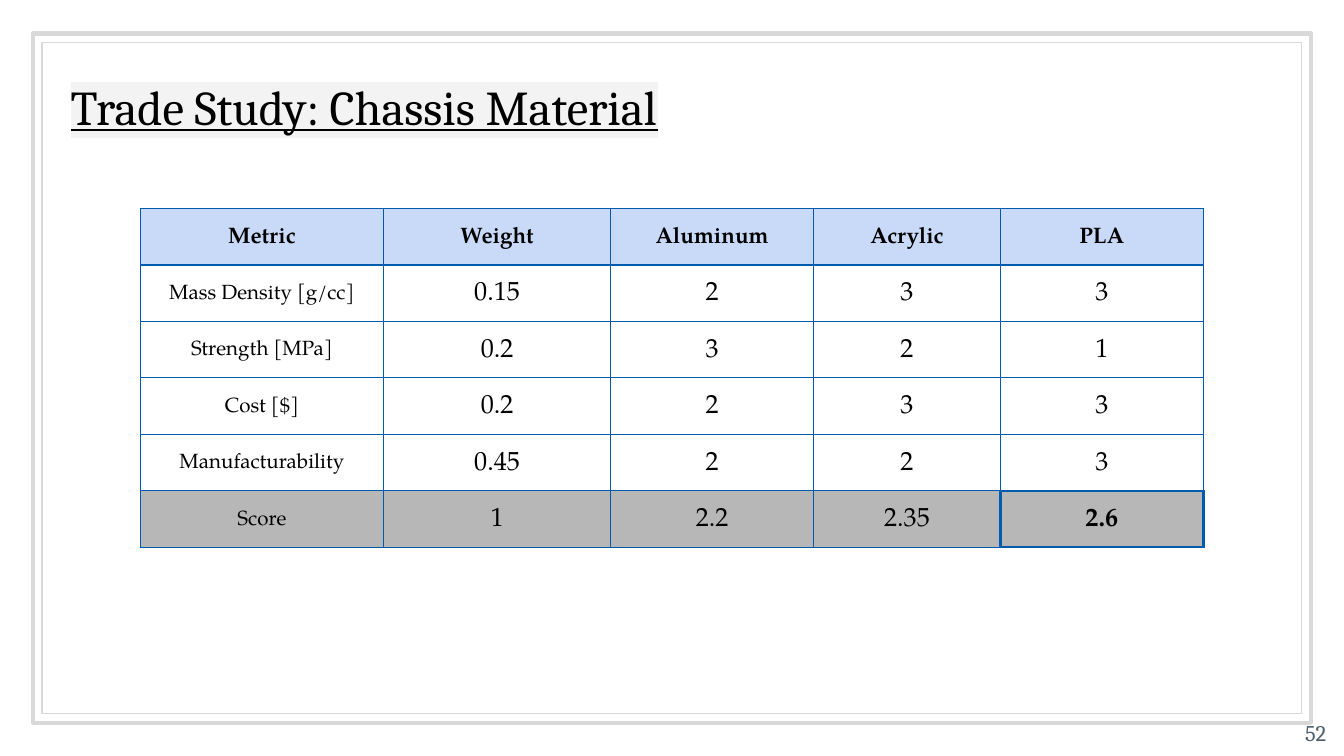
from dataclasses import dataclass

from lxml.etree import SubElement
from pptx import Presentation
from pptx.dml.color import RGBColor
from pptx.enum.shapes import MSO_SHAPE
from pptx.enum.text import MSO_ANCHOR, PP_ALIGN
from pptx.oxml.ns import qn
from pptx.util import Inches, Pt

WIDE = Inches(10)
HIGH = WIDE * 9 // 16
BLACK = RGBColor(0x00, 0x00, 0x00)
SLATE = RGBColor(0x4D, 0x5F, 0x6D)
SILVER = RGBColor(0xD9, 0xD9, 0xD9)
PALE = RGBColor(0xF3, 0xF3, 0xF3)
BLUE = RGBColor(0x00, 0x5B, 0xAD)
SKY = RGBColor(0xC9, 0xDA, 0xF8)
GREY = RGBColor(0xB7, 0xB7, 0xB7)
SERIF, BOOK = "Cambria", "TeX Gyre Pagella"

COLS = (18.1, 16.9, 15.1, 13.9, 15.1)
ROW = 7.47
ROWS = (
    ("Metric", "Weight", "Aluminum", "Acrylic", "PLA"),
    ("Mass Density [g/cc]", "0.15", "2", "3", "3"),
    ("Strength [MPa]", "0.2", "3", "2", "1"),
    ("Cost [$]", "0.2", "2", "3", "3"),
    ("Manufacturability", "0.45", "2", "2", "3"),
    ("Score", "1", "2.2", "2.35", "2.6"),
)
LAST = len(ROWS) - 1
BEST = (LAST, len(COLS) - 1)
SIDES = {"a:lnL": (0, -1), "a:lnR": (0, 1), "a:lnT": (-1, 0), "a:lnB": (1, 0)}


@dataclass(frozen=True)
class Box:
    """Place and size in percent of the slide."""
    left: float
    top: float
    width: float
    height: float

    def emu(self) -> tuple:
        """Give the lengths in slide units."""
        return (across(self.left), down(self.top),
                across(self.width), down(self.height))


@dataclass(frozen=True)
class Frame:
    """A page border."""
    box: Box
    line: float


FRAMES = (
    Frame(Box(2.44, 4.44, 95.1, 91.2), 2.25),
    Frame(Box(3.14, 5.66, 93.7, 88.75), 0.75),
)


def across(share: float) -> int:
    """Turn percent of the width into a length."""
    return round(WIDE * share / 100)


def down(share: float) -> int:
    """Turn percent of the height into a length."""
    return round(HIGH * share / 100)


def write(frame, text: str, *, size: float, font: str = BOOK,
          color: RGBColor = BLACK, bold: bool = False, under: bool = False,
          mark: RGBColor | None = None, align=PP_ALIGN.CENTER,
          space: float = 1.0) -> None:
    """Put one formatted line into a text frame."""
    para = frame.paragraphs[0]
    para.alignment, para.line_spacing = align, space
    run = para.add_run()
    run.text = text
    face = run.font
    face.size, face.name, face.bold = Pt(size), font, bold
    face.underline = under
    face.color.rgb = color
    if mark is not None:
        props = run._r.get_or_add_rPr()
        light = SubElement(props, qn("a:highlight"))
        SubElement(light, qn("a:srgbClr"), val=str(mark))
        props.find(qn("a:latin")).addprevious(light)


def label(slide, box: Box, text: str, anchor, **style) -> None:
    """Add a text box."""
    frame = slide.shapes.add_textbox(*box.emu()).text_frame
    frame.word_wrap, frame.vertical_anchor = True, anchor
    frame.margin_left = frame.margin_right = Inches(0.1)
    frame.margin_top = frame.margin_bottom = Inches(0.1)
    write(frame, text, **style)


def border(slide, item: Frame) -> None:
    """Add a hollow page border."""
    shape = slide.shapes.add_shape(MSO_SHAPE.RECTANGLE, *item.box.emu())
    shape.shadow.inherit = False
    shape.fill.background()
    shape.line.color.rgb = SILVER
    shape.line.width = Pt(item.line)


def rule(cell, spot: tuple[int, int]) -> None:
    """Draw the cell edges, heavier around the best score."""
    props = cell._tc.get_or_add_tcPr()
    for tag, (dy, dx) in SIDES.items():
        heavy = BEST in (spot, (spot[0] + dy, spot[1] + dx))
        edge = SubElement(props, qn(tag), w=str(Pt(1.5 if heavy else 0.75)))
        fill = SubElement(edge, qn("a:solidFill"))
        SubElement(fill, qn("a:srgbClr"), val=str(BLUE))


def shade(cell, row: int) -> None:
    """Fill the head and score rows only."""
    tint = {0: SKY, LAST: GREY}.get(row)
    if tint is None:
        cell.fill.background()
    else:
        cell.fill.solid()
        cell.fill.fore_color.rgb = tint


def grid(slide, left: float, top: float) -> None:
    """Add the trade study table."""
    box = Box(left, top, sum(COLS), ROW * len(ROWS))
    table = slide.shapes.add_table(len(ROWS), len(COLS), *box.emu()).table
    table.first_row = table.horz_banding = False
    for col, share in zip(table.columns, COLS):
        col.width = across(share)
    for y, words in enumerate(ROWS):
        table.rows[y].height = down(ROW)
        for x, text in enumerate(words):
            cell = table.cell(y, x)
            cell.vertical_anchor = MSO_ANCHOR.MIDDLE
            cell.margin_left = cell.margin_right = Inches(0.03)
            cell.margin_top = cell.margin_bottom = Inches(0.02)
            rule(cell, (y, x))
            shade(cell, y)
            size = 12 if y == 0 else 11 if x == 0 else 14
            write(cell.text_frame, text, size=size, space=1.15,
                  bold=y == 0 or (y, x) == BEST)


def main() -> None:
    """Build and save the slide."""
    deck = Presentation()
    deck.slide_width, deck.slide_height = WIDE, HIGH
    slide = deck.slides.add_slide(deck.slide_layouts[6])
    for item in FRAMES:
        border(slide, item)
    label(slide, Box(4.28, 6.63, 91.5, 14.76), "Trade Study: Chassis Material",
          MSO_ANCHOR.MIDDLE, size=26, font=SERIF, under=True, mark=PALE,
          align=PP_ALIGN.LEFT)
    label(slide, Box(95.74, 95.64, 4.3, 4.8), "52", MSO_ANCHOR.BOTTOM,
          size=12, font=SERIF, color=SLATE)
    grid(slide, 10.44, 27.58)
    deck.save("out.pptx")


if __name__ == "__main__":
    main()
